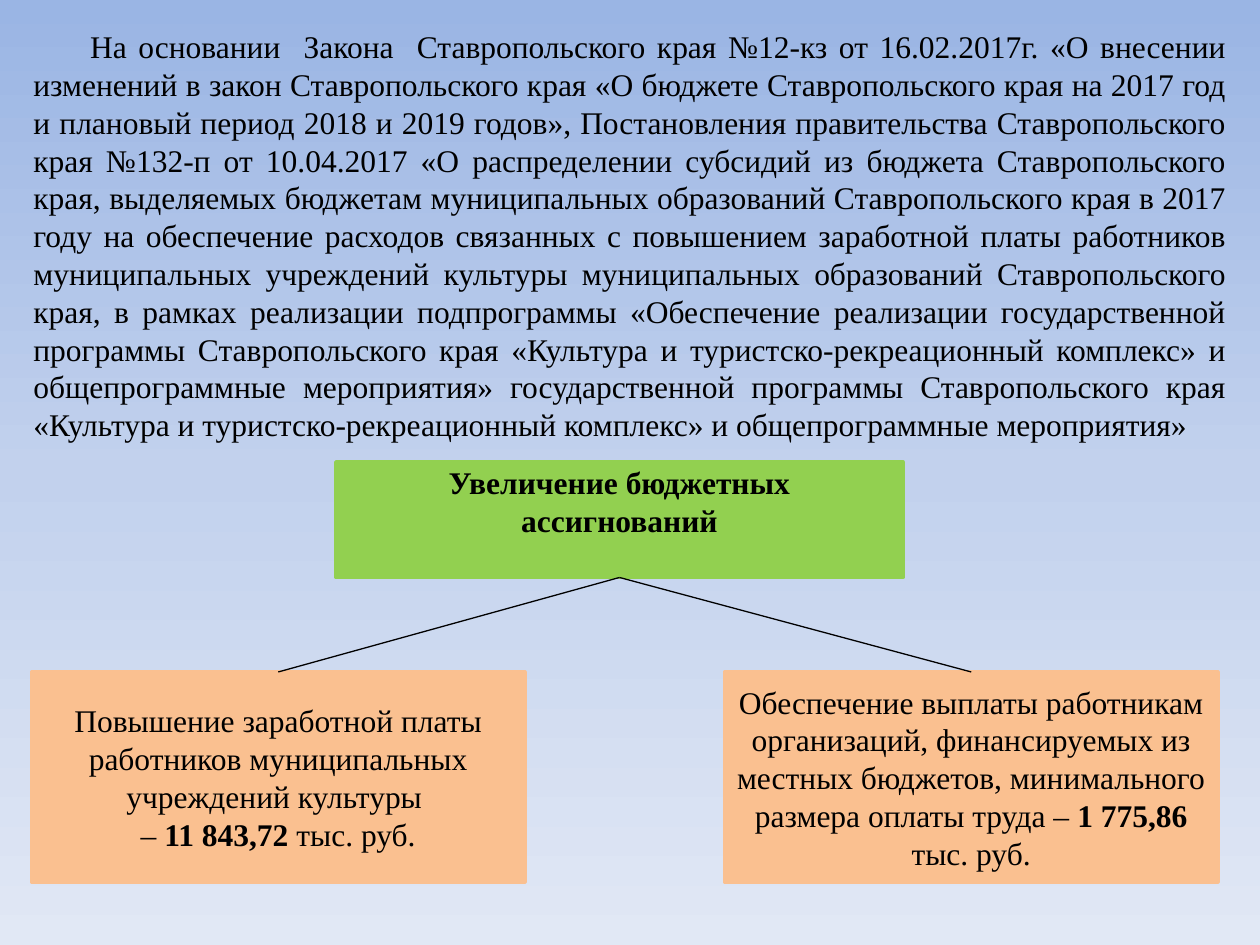
from copy import deepcopy

from lxml.etree import SubElement
from pptx import Presentation
from pptx.dml.color import RGBColor
from pptx.enum.shapes import MSO_CONNECTOR, MSO_SHAPE
from pptx.enum.text import MSO_ANCHOR, PP_ALIGN
from pptx.oxml.ns import qn
from pptx.util import Inches, Pt

CELL = Inches(10) / 120
FONT = "Times New Roman"
BLACK, GREEN, PEACH = "000000", "92D050", "FAC090"
GRADIENT = [(0, "9AB5E4"), (0.5, "C2D1ED"), (1, "E1E8F5")]

BUDGET_LAW = (
    "На основании  Закона  Ставропольского края №12-кз от 16.02.2017г. «О внесении "
    "изменений в закон Ставропольского края «О бюджете Ставропольского края на 2017 год "
    "и плановый период 2018 и 2019 годов»,"
)
SUBSIDY_DECREE = (
    "Постановления правительства Ставропольского "
    "края №132-п от 10.04.2017 «О распределении субсидий из бюджета Ставропольского "
    "края, выделяемых бюджетам муниципальных образований Ставропольского края в 2017 "
    "году на обеспечение расходов связанных с повышением заработной платы работников "
    "муниципальных учреждений культуры муниципальных образований Ставропольского края,"
)
CULTURE_PROGRAMME = (
    "в рамках реализации подпрограммы «Обеспечение реализации государственной "
    "программы Ставропольского края «Культура и туристско-рекреационный комплекс» и "
    "общепрограммные мероприятия» государственной программы Ставропольского края "
    "«Культура и туристско-рекреационный комплекс» и общепрограммные мероприятия»"
)
LEGAL_BASIS = " ".join([BUDGET_LAW, SUBSIDY_DECREE, CULTURE_PROGRAMME])
INCREASE = [[("Увеличение бюджетных ассигнований", True)]]
CULTURE_PAY = [
    [("Повышение заработной платы работников муниципальных учреждений культуры ", False)],
    [("– ", False), ("11 843,72 ", True), ("тыс. руб.", False)],
]
MINIMUM_PAY = [
    [
        ("Обеспечение выплаты работникам организаций, финансируемых из местных бюджетов, "
         "минимального размера оплаты труда – ", False),
        ("1 775,86 ", True),
        ("тыс. руб.", False),
    ],
]


def colour(value):
    return RGBColor.from_string(value)


def grid(*cells):
    return [round(cell * CELL) for cell in cells]


def write_paragraphs(text_frame, paragraphs, alignment):
    text_frame.word_wrap = True
    for index, runs in enumerate(paragraphs):
        paragraph = text_frame.add_paragraph() if index else text_frame.paragraphs[0]
        paragraph.alignment = alignment
        for text, bold in runs:
            run = paragraph.add_run()
            run.text = text
            run.font.name = FONT
            run.font.size = Pt(18)
            run.font.bold = bold
            run.font.color.rgb = colour(BLACK)


def paint_background(slide):
    fill = slide.background.fill
    fill.gradient()
    fill.gradient_angle = 270
    stop_list = slide.element.xpath(".//a:gsLst")[0]
    while len(stop_list) < len(GRADIENT):
        stop_list.append(deepcopy(stop_list[0]))
    for stop, (position, value) in zip(fill.gradient_stops, GRADIENT):
        stop.position = position
        stop.color.rgb = colour(value)


def add_legal_basis(slide, box):
    text_frame = slide.shapes.add_textbox(*grid(*box)).text_frame
    write_paragraphs(text_frame, [[(LEGAL_BASIS, False)]], PP_ALIGN.JUSTIFY)
    properties = text_frame.paragraphs[0]._p.get_or_add_pPr()
    properties.set("indent", str(Inches(0.45)))


def add_box(slide, box, fill, paragraphs):
    shape = slide.shapes.add_shape(MSO_SHAPE.RECTANGLE, *grid(*box))
    shape.shadow.inherit = False
    shape.fill.solid()
    shape.fill.fore_color.rgb = colour(fill)
    shape.line.color.rgb = colour(fill)
    shape.line.width = Pt(2)
    shape.text_frame.vertical_anchor = MSO_ANCHOR.MIDDLE
    write_paragraphs(shape.text_frame, paragraphs, PP_ALIGN.CENTER)
    return shape


def join(slide, parent, child):
    connector = slide.shapes.add_connector(MSO_CONNECTOR.STRAIGHT, 0, 0, 0, 0)
    connector.begin_connect(parent, 2)
    connector.end_connect(child, 0)
    connector.line.color.rgb = colour(BLACK)
    connector.line.width = Pt(0.75)
    SubElement(connector._element.spPr, qn("a:effectLst"))


def add_increase_tree(slide, left, top):
    increase = add_box(slide, (left + 29, top, 54, 11), GREEN, INCREASE)
    increase.text_frame.margin_bottom = Inches(0.35)
    children = [
        add_box(slide, (left + offset, top + 20, 47, 20), PEACH, paragraphs)
        for offset, paragraphs in ((0, CULTURE_PAY), (66, MINIMUM_PAY))
    ]
    for child in children:
        join(slide, increase, child)


def main():
    presentation = Presentation()
    presentation.slide_width = Inches(10)
    presentation.slide_height = Inches(7.5)
    slide = presentation.slides.add_slide(presentation.slide_layouts[6])
    paint_background(slide)
    add_legal_basis(slide, (2, 2, 116, 41))
    add_increase_tree(slide, 3, 44)
    presentation.save("out.pptx")


if __name__ == "__main__":
    main()
